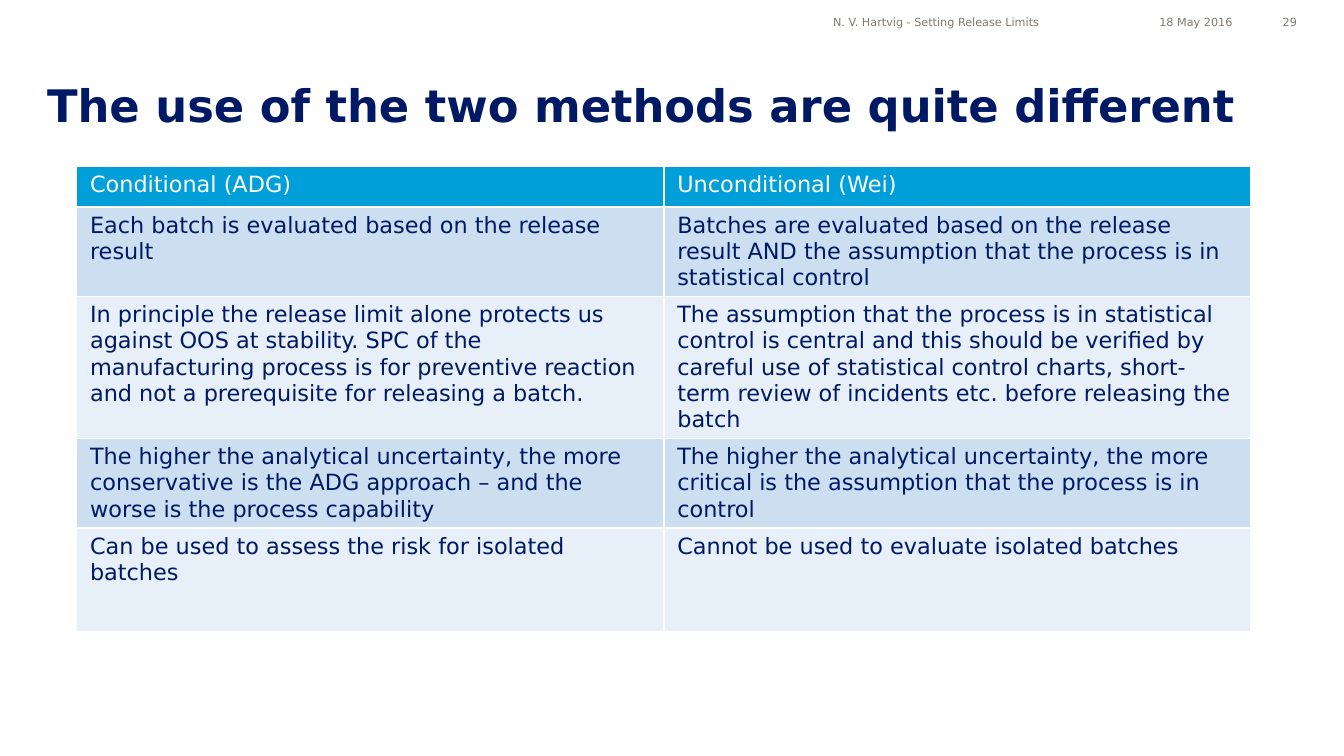
"""Builds a slide comparing the conditional and unconditional release methods."""
import pptx
import pptx.dml.color
import pptx.enum.text
import pptx.oxml
import pptx.oxml.ns
import pptx.util
from pptx.util import Inches

THEME = {
    "font": "DejaVu Sans",
    "navy": "001965", "grey": "82786F", "white": "FFFFFF",
    "header": "009FDA", "bands": ("CCDFF1", "E7F0F8"),
    "title_size": 24, "table_size": 12, "footer_size": 6,
    "border": 1,
}

TITLE = "The use of the two methods are quite different"
FOOTERS = [
    ("N. V. Hartvig - Setting Release Limits", 4.56, 3.17),
    ("29", 9.31, 0.34),
    ("18 May 2016", 7.86, 1.31),
]
METHODS = [
    (0.3, "Conditional (ADG)", "Unconditional (Wei)"),
    (0.6, "Each batch is evaluated based on the release result",
     "Batches are evaluated based on the release result AND the assumption that "
     "the process is in statistical control"),
    (0.95, "In principle the release limit alone protects us against OOS at stability. "
     "SPC of the manufacturing process is for preventive reaction and not a "
     "prerequisite for releasing a batch.",
     "The assumption that the process is in statistical control is central and this "
     "should be verified by careful use of statistical control charts, short-term "
     "review of incidents etc. before releasing the batch"),
    (0.6, "The higher the analytical uncertainty, the more conservative is the ADG "
     "approach – and the worse is the process capability",
     "The higher the analytical uncertainty, the more critical is the assumption "
     "that the process is in control"),
    (0.77, "Can be used to assess the risk for isolated batches",
     "Cannot be used to evaluate isolated batches"),
]


def rgb(color):
    return pptx.dml.color.RGBColor.from_string(color)


def write(frame, text, size, color, align="LEFT", bold=False):
    frame.text = text
    paragraph = frame.paragraphs[0]
    paragraph.alignment = getattr(pptx.enum.text.PP_ALIGN, align)
    font = paragraph.runs[0].font
    font.name = THEME["font"]
    font.size = pptx.util.Pt(size)
    font.bold = bold
    font.color.rgb = rgb(color)


def center_without_margins(frame):
    frame.word_wrap = True
    frame.auto_size = pptx.enum.text.MSO_AUTO_SIZE.NONE
    frame.vertical_anchor = pptx.enum.text.MSO_ANCHOR.MIDDLE
    frame.margin_left = frame.margin_right = frame.margin_top = frame.margin_bottom = 0


def add_borders(cell):
    properties = cell._tc.get_or_add_tcPr()
    width = pptx.util.Pt(THEME["border"])
    for side in "LRTB":
        properties.append(pptx.oxml.parse_xml(
            f'<a:ln{side} {pptx.oxml.ns.nsdecls("a")} w="{width}"><a:solidFill>'
            f'<a:srgbClr val="{THEME["white"]}"/></a:solidFill></a:ln{side}>'))


def add_title(slide):
    title = slide.shapes.title
    title.left, title.top = Inches(0.35), Inches(0.56)
    title.width, title.height = Inches(9.31), Inches(0.43)
    center_without_margins(title.text_frame)
    write(title.text_frame, TITLE, THEME["title_size"], THEME["navy"], bold=True)


def add_footers(slide):
    for text, left, width in FOOTERS:
        footer = slide.shapes.add_textbox(
            Inches(left), Inches(0.11), Inches(width), Inches(0.11))
        center_without_margins(footer.text_frame)
        write(footer.text_frame, text, THEME["footer_size"], THEME["grey"], "RIGHT")


def add_methods(slide):
    methods = slide.shapes.add_table(
        len(METHODS), 2, Inches(0.57), Inches(1.24), Inches(8.74),
        Inches(sum(row[0] for row in METHODS))).table
    for index, (height, *texts) in enumerate(METHODS):
        methods.rows[index].height = Inches(height)
        is_header = index == 0
        fill = THEME["header"] if is_header else THEME["bands"][(index - 1) % 2]
        color = THEME["white"] if is_header else THEME["navy"]
        for column, text in enumerate(texts):
            cell = methods.cell(index, column)
            cell.margin_left = cell.margin_right = Inches(0.1)
            cell.margin_top = cell.margin_bottom = Inches(0.04)
            add_borders(cell)
            cell.fill.solid()
            cell.fill.fore_color.rgb = rgb(fill)
            write(cell.text_frame, text, THEME["table_size"], color)


def main():
    presentation = pptx.Presentation()
    presentation.slide_width = Inches(10)
    presentation.slide_height = presentation.slide_width * 9 // 16
    slide = presentation.slides.add_slide(presentation.slide_layouts[5])
    add_title(slide)
    add_footers(slide)
    add_methods(slide)
    presentation.save("out.pptx")


if __name__ == "__main__":
    main()
